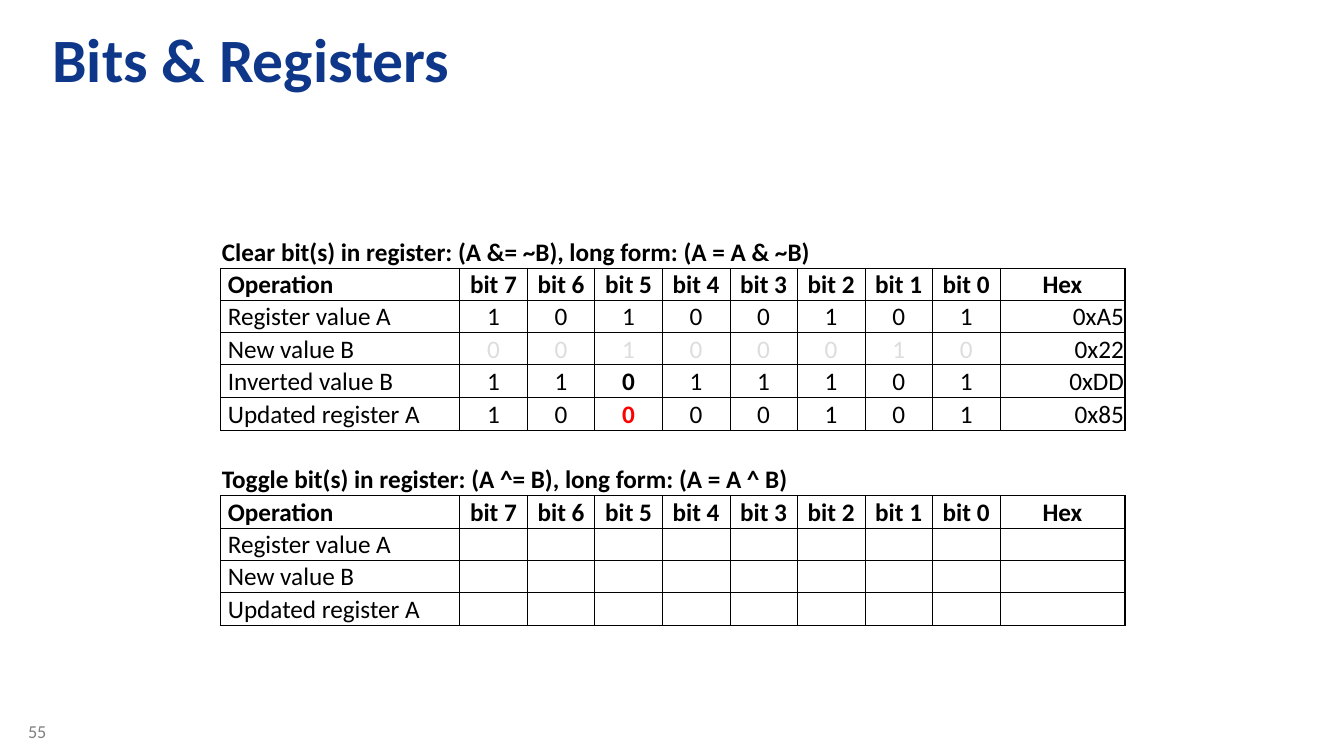
from lxml import etree
from pptx import Presentation
from pptx.dml.color import RGBColor
from pptx.enum.text import MSO_ANCHOR, PP_ALIGN
from pptx.oxml.ns import qn
from pptx.util import Inches, Pt

MIDDLE, BOTTOM = MSO_ANCHOR.MIDDLE, MSO_ANCHOR.BOTTOM
LEFT, CENTER, RIGHT = PP_ALIGN.LEFT, PP_ALIGN.CENTER, PP_ALIGN.RIGHT
FONT = "Calibri"
BLACK, BLUE, GRAY, PALE, RED = "000000", "0E3689", "808080", "DDDDDD", "FF0000"
THICK, THIN = 1, 0.5

WIDTHS = [2.37] + [0.67] * 8 + [1.24]
HEIGHTS = [0.33, 0.32, 0.32, 0.32, 0.32, 0.33] * 2
COLS = len(WIDTHS)
HEAD = ["Operation"] + [f"bit {n}" for n in range(7, -1, -1)] + ["Hex"]

CLEAR = ("Clear bit(s) in register: (A &= ~B), long form: (A = A & ~B)", [
    ("Register value A", "10100101", "0xA5"),
    ("New value B", "00100010", "0x22"),
    ("Inverted value B", "11011101", "0xDD"),
    ("Updated register A", "10000101", "0x85"),
])
TOGGLE = ("Toggle bit(s) in register: (A ^= B), long form: (A = A ^ B)", [
    ("Register value A", " " * 8, ""),
    ("New value B", " " * 8, ""),
    ("Updated register A", " " * 8, ""),
])
CLEAR_TOP, TOGGLE_TOP = 0, 7
PALE_ROW, BOLD_ROW, RED_ROW, KEY_COL = 3, 4, 5, 3


def color(code):
    return RGBColor.from_string(code)


def add_run(para, text, size, code, bold=False):
    run = para.add_run()
    run.text = text
    font = run.font
    font.name, font.size, font.bold = FONT, Pt(size), bold
    font.color.rgb = color(code)


def set_edges(cell, **edges):
    """Draw the sides named L, R, T, B at a width in points; hide the others."""
    props = cell._tc.get_or_add_tcPr()
    for spot, side in enumerate("LRTB"):
        line = etree.Element(qn(f"a:ln{side}"))
        if side in edges:
            line.set("w", str(Pt(edges[side])))
            fill = etree.SubElement(line, qn("a:solidFill"))
            etree.SubElement(fill, qn("a:srgbClr")).set("val", BLACK)
        else:
            etree.SubElement(line, qn("a:noFill"))
        props.insert(spot, line)


def set_cell(cell, text, align=LEFT, code=BLACK, bold=False, inset=0.01):
    cell.fill.background()
    cell.vertical_anchor = BOTTOM
    cell.margin_left = Inches(inset)
    cell.margin_right = cell.margin_top = Inches(0.01)
    cell.margin_bottom = 0
    para = cell.text_frame.paragraphs[0]
    para.alignment = align
    add_run(para, text, 18, code, bold)


def fill_block(table, top, block):
    """Write a caption row, the header row and the value rows from row top."""
    title, values = block
    for col in range(COLS):
        set_edges(table.cell(top, col), B=THICK)
    table.cell(top, 0).merge(table.cell(top, COLS - 1))
    set_cell(table.cell(top, 0), title, bold=True)

    rows = [HEAD] + [[name, *bits, code] for name, bits, code in values]
    for step, row in enumerate(rows):
        for col, text in enumerate(row):
            cell = table.cell(top + 1 + step, col)
            last = col == COLS - 1
            align = LEFT if col == 0 else RIGHT if last and step else CENTER
            set_cell(cell, text.strip(), align, bold=step == 0,
                     inset=0.01 if col else 0.07)
            set_edges(cell,
                      L=THIN if col else THICK,
                      R=THICK if last else THIN,
                      T=THIN if step else THICK,
                      B=THICK if step == len(rows) - 1 else THIN)


def mark(cell, code, bold=False):
    font = cell.text_frame.paragraphs[0].runs[0].font
    font.color.rgb, font.bold = color(code), bold


def add_grid(slide):
    frame = slide.shapes.add_table(len(HEIGHTS), COLS, Inches(2.19), Inches(2.33),
                                   Inches(sum(WIDTHS)), Inches(sum(HEIGHTS)))
    table = frame.table
    table.first_row = table.horz_banding = False
    for col, width in zip(table.columns, WIDTHS):
        col.width = Inches(width)
    for row, height in zip(table.rows, HEIGHTS):
        row.height = Inches(height)

    fill_block(table, CLEAR_TOP, CLEAR)
    fill_block(table, TOGGLE_TOP, TOGGLE)
    for col in range(COLS):
        gap = table.cell(TOGGLE_TOP - 1, col)
        set_cell(gap, "")
        set_edges(gap, T=THICK)

    for col in range(1, COLS - 1):
        mark(table.cell(PALE_ROW, col), PALE)
    mark(table.cell(BOLD_ROW, KEY_COL), BLACK, True)
    mark(table.cell(RED_ROW, KEY_COL), RED, True)


def set_title(slide, text):
    title = slide.shapes.title
    title.left, title.top = Inches(0.39), Inches(0.11)
    title.width, title.height = Inches(12.47), Inches(1.03)
    frame = title.text_frame
    frame.word_wrap = True
    frame.vertical_anchor = MIDDLE
    frame.margin_left = frame.margin_right = Inches(0.13)
    frame.margin_top = frame.margin_bottom = Inches(0.07)
    para = frame.paragraphs[0]
    para.alignment, para.line_spacing = LEFT, 0.9
    add_run(para, text, 44, BLUE, True)


def add_number(slide, text):
    box = slide.shapes.add_textbox(Inches(0.18), Inches(7.1), Inches(0.59), Inches(0.4))
    box.text_frame.word_wrap = True
    add_run(box.text_frame.paragraphs[0], text, 13, GRAY)


def main():
    deck = Presentation()
    deck.slide_width, deck.slide_height = Inches(13.33), Inches(7.5)
    slide = deck.slides.add_slide(deck.slide_layouts.get_by_name("Title Only"))
    add_number(slide, "55")
    set_title(slide, "Bits & Registers")
    add_grid(slide)
    deck.save("out.pptx")


if __name__ == "__main__":
    main()
